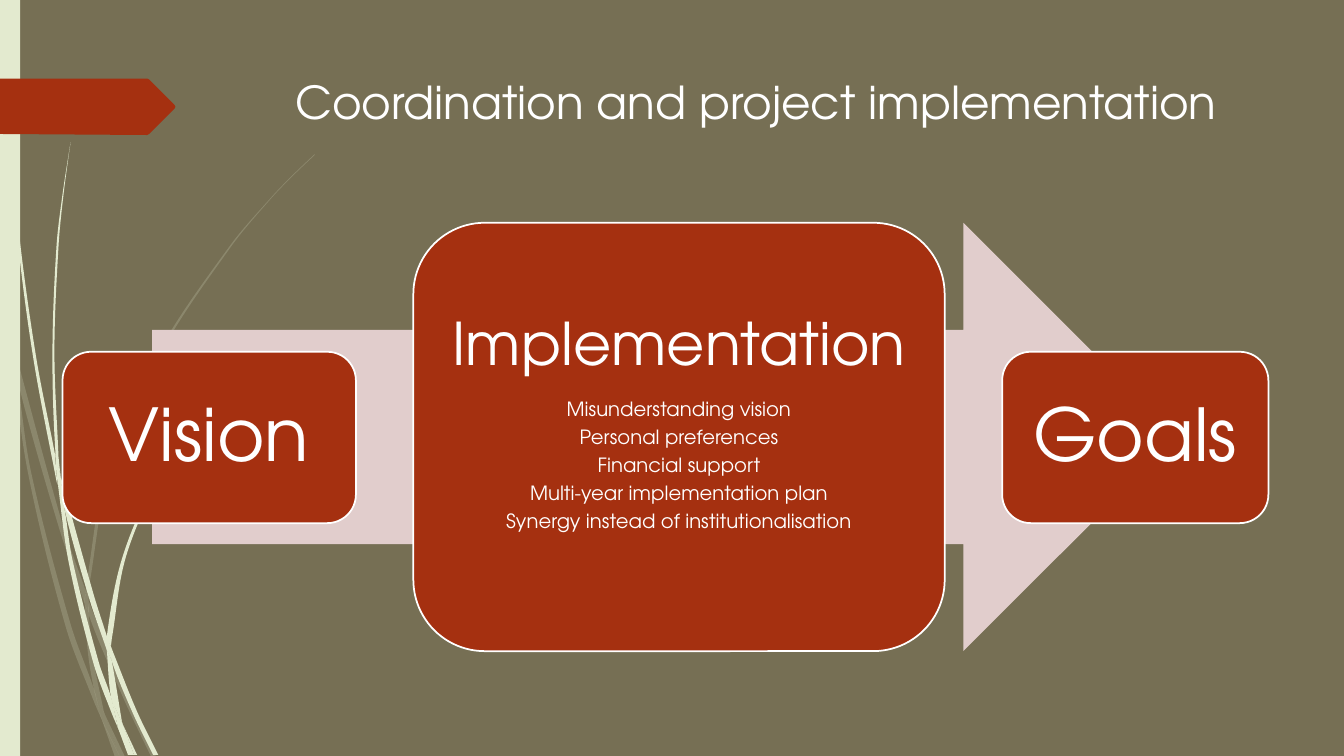
from math import dist
from lxml import etree
from pptx import Presentation
from pptx import util as u
from pptx.dml.color import RGBColor
from pptx.enum import shapes, text
from pptx.oxml import ns

THEME = dict(
    font="TeX Gyre Adventor",
    back="766F54", pale="E3EACF", rust="A53010", arrow="E1CDCC", white="FFFFFF",
    title=32.4, stage=52, head=42, item=14, border=1.25, haze=20,
)
TITLE = "Coordination and project implementation"
TAG = [(0, 0.78), (1.46, 0.78), (1.48, 0.79), (1.73, 1.04), (1.74, 1.06), (1.73, 1.08),
       (1.48, 1.33), (1.46, 1.34), (0, 1.33)]
SIDE_INSETS = (0.22, 0.22, 0.22, 0.22)
STAGES = [
    ((0.62, 3.49, 2.91, 1.7), SIDE_INSETS, [("Vision", "stage")]),
    ((4.1, 2.21, 5.27, 4.25), (0.17, 0.17, 0.17, 0.43), [
        ("Implementation", "head"),
        ("Misunderstanding vision", "item"),
        ("Personal preferences", "item"),
        ("Financial support", "item"),
        ("Multi-year implementation plan", "item"),
        ("Synergy instead of institutionalisation", "item"),
    ]),
    ((9.94, 3.49, 2.64, 1.7), SIDE_INSETS, [("Goals", "stage")]),
]
HAZY_LEAVES = [
    ([(0, 2.99), (0.1, 3.44), (0.11, 3.5)], [(0.09, 3.22), (0, 2.82)]),
    ([(0.14, 3.45), (0.17, 3.76), (0.58, 5.22), (0.84, 5.99)],
     [(0.85, 5.86), (0.62, 5.2), (0.14, 3.45)]),
    ([(0.88, 5.96), (0.88, 6.1), (1.23, 6.94), (1.5, 7.51)],
     [(1.55, 7.51), (1.27, 6.92), (0.92, 6.07), (0.88, 5.96)]),
    ([(1.05, 7.11), (1.19, 7.51)], [(1.24, 7.51), (1.05, 7.11)]),
    ([(0.11, 3.5), (0.28, 4.7), (0.65, 6.21), (0.92, 6.93), (1.01, 7.14)],
     [(0.99, 7.07), (0.93, 6.83), (0.7, 6.19), (0.31, 4.69), (0.17, 3.76), (0.11, 3.5)]),
    ([(0.84, 5.99), (0.87, 6.46), (0.93, 6.83), (0.96, 6.92), (1.05, 7.11)],
     [(1.03, 7.06), (0.91, 6.46), (0.88, 6.1), (0.84, 5.99)]),
    ([(3.12, 1.53), (2.89, 1.75), (2.68, 1.97), (2.28, 2.44), (1.58, 3.48), (1.07, 4.61),
      (0.85, 5.84), (0.85, 5.86), (0.88, 5.96)],
     [(0.88, 5.84), (1.1, 4.62), (1.6, 3.49), (2.29, 2.45), (2.68, 1.98), (2.9, 1.75),
      (3.12, 1.54)]),
    ([(1.01, 7.14), (1.14, 7.51)], [(1.19, 7.51), (1.01, 7.14)]),
    ([(0.85, 5.86), (0.84, 5.99), (0.88, 6.08), (0.88, 6.1)], [(0.88, 5.96), (0.85, 5.86)]),
    ([(0.93, 6.83), (0.99, 7.07), (1.01, 7.14), (1.19, 7.51)],
     [(1.05, 7.11), (0.96, 6.92), (0.93, 6.83)]),
]
BRIGHT_LEAVES = [
    ([(0.03, 0), (0.04, 0.48), (0.07, 1.1), (0.17, 2.33), (0.33, 3.55), (0.56, 4.77),
      (0.57, 4.81)],
     [(0.55, 4.57), (0.55, 4.53), (0.36, 3.55), (0.19, 2.32), (0.08, 1.09), (0.05, 0.48),
      (0.04, 0)]),
    ([(0.6, 4.72), (0.64, 5.05), (0.88, 5.92), (1.06, 6.45)],
     [(1.06, 6.31), (0.93, 5.9), (0.6, 4.72)]),
    ([(1.1, 6.41), (1.11, 6.56), (1.32, 7.08), (1.52, 7.49)],
     [(1.57, 7.49), (1.36, 7.06), (1.13, 6.49), (1.1, 6.41)]),
    ([(0.57, 4.77), (0.68, 5.57), (0.93, 6.59), (1.11, 7.08), (1.17, 7.22)],
     [(1.16, 7.17), (1.1, 6.91), (0.98, 6.57), (0.72, 5.56), (0.64, 5.05), (0.57, 4.77)]),
    ([(0.7, 1.41), (0.62, 1.93), (0.56, 2.45), (0.52, 3.49), (0.55, 4.49), (0.6, 4.72)],
     [(0.58, 4.53), (0.54, 3.49), (0.58, 2.45), (0.63, 1.93), (0.7, 1.41)]),
    ([(1.22, 7.19), (1.33, 7.49)], [(1.36, 7.49), (1.22, 7.19)]),
    ([(0.55, 4.49), (0.55, 4.53), (0.57, 4.77), (0.64, 5.05)], [(0.6, 4.72), (0.55, 4.49)]),
    ([(2.6, 3.44), (2.45, 3.58), (2.31, 3.73), (2.04, 4.05), (1.56, 4.74), (1.22, 5.51),
      (1.06, 6.31), (1.1, 6.41)],
     [(1.11, 6.33), (1.25, 5.52), (1.58, 4.76), (2.05, 4.06), (2.31, 3.74), (2.45, 3.59),
      (2.61, 3.44)]),
    ([(1.17, 7.22), (1.27, 7.49)], [(1.31, 7.49), (1.17, 7.22)]),
    ([(1.06, 6.45), (1.1, 6.91), (1.16, 7.06), (1.22, 7.19)],
     [(1.21, 7.16), (1.11, 6.56), (1.09, 6.51), (1.06, 6.45)]),
    ([(1.06, 6.31), (1.06, 6.45), (1.09, 6.51), (1.11, 6.56)], [(1.1, 6.41), (1.06, 6.31)]),
    ([(1.1, 6.91), (1.16, 7.17), (1.17, 7.22), (1.3, 7.49)],
     [(1.33, 7.49), (1.22, 7.19), (1.16, 7.06), (1.1, 6.91)]),
]


def rgb(name):
    return RGBColor.from_string(THEME[name])


def assign(obj, values):
    for key, value in values.items():
        setattr(obj, key, value)


def paint(sp, color, border=False, opacity=None):
    sp.shadow.inherit = False
    sp.fill.solid()
    sp.fill.fore_color.rgb = rgb(color)
    if opacity:
        clr = sp._element.spPr.find(".//" + ns.qn("a:srgbClr"))
        etree.SubElement(clr, ns.qn("a:alpha"), val=str(opacity * 1000))
    if border:
        sp.line.color.rgb = rgb("white")
        sp.line.width = u.Pt(THEME["border"])
    else:
        sp.line.fill.background()


def preset(parent, kind, box, color, border=False):
    sp = parent.shapes.add_shape(kind, *map(u.Inches, box))
    paint(sp, color, border)


def outline(parent, points):
    start, *rest = [tuple(map(u.Inches, point)) for point in points]
    builder = parent.shapes.build_freeform(*start)
    builder.add_line_segments(rest, close=True)
    return builder.convert_to_shape()


def curves(points):
    ends = [points[0], *points, points[-1]]
    slopes = [[(z - x) / (dist(a, b) + dist(b, c)) for x, z in zip(a, c)]
              for a, b, c in zip(ends, ends[1:], ends[2:])]
    segments = []
    for a, b, m, n in zip(points, points[1:], slopes, slopes[1:]):
        third = dist(a, b) / 3
        segments.append([tuple(x + third * k for x, k in zip(a, m)),
                         tuple(x - third * k for x, k in zip(b, n)), b])
    return segments


def leaf(group, down, up, opacity):
    segments = [*curves(down), [up[0]], *curves(up)]
    sp = outline(group, [down[0], *(point for seg in segments for point in seg)])
    lines = iter(sp._element.findall(".//" + ns.qn("a:lnTo")))
    for seg in segments:
        nodes = [next(lines) for _ in seg]
        if len(nodes) == 3:
            curve = etree.Element(ns.qn("a:cubicBezTo"))
            nodes[0].addprevious(curve)
            for node in nodes:
                curve.append(node[0])
                node.getparent().remove(node)
    paint(sp, "pale", opacity=opacity)


def textbox(parent, box, lines, **frame):
    tf = parent.shapes.add_textbox(*map(u.Inches, box)).text_frame
    assign(tf, dict(word_wrap=True, **frame))
    for i, (words, size, layout) in enumerate(lines):
        p = tf.add_paragraph() if i else tf.paragraphs[0]
        assign(p, layout)
        r = p.add_run()
        r.text = words
        assign(r.font, dict(name=THEME["font"], size=u.Pt(THEME[size])))
        r.font.color.rgb = rgb("white")


def stage(group, box, insets, lines):
    preset(group, shapes.MSO_SHAPE.ROUNDED_RECTANGLE, box, "rust", border=True)
    x, y, w, h = box
    pad = 0.0488 * min(w, h)
    sides = ("margin_left", "margin_top", "margin_right", "margin_bottom")
    styled = [(words, size, dict(alignment=text.PP_ALIGN.CENTER, line_spacing=0.9,
                                 space_after=u.Pt(0.35 * THEME[size])))
              for words, size in lines]
    textbox(group, (x + pad, y + pad, w - 2 * pad, h - 2 * pad), styled,
            vertical_anchor=text.MSO_ANCHOR.MIDDLE, **dict(zip(sides, map(u.Inches, insets))))


def main():
    prs = Presentation()
    assign(prs, dict(slide_width=u.Inches(13.33), slide_height=u.Inches(7.5)))
    s = prs.slides.add_slide(prs.slide_layouts[6])
    s.background.fill.solid()
    s.background.fill.fore_color.rgb = rgb("back")

    for leaves, opacity in ((HAZY_LEAVES, THEME["haze"]), (BRIGHT_LEAVES, None)):
        group = s.shapes.add_group_shape()
        for down, up in leaves:
            leaf(group, down, up, opacity)
    preset(s, shapes.MSO_SHAPE.RECTANGLE, (0, 0, 0.2, 7.5), "pale")
    paint(outline(s, TAG), "rust")
    textbox(s, (2.83, 0.69, 9.75, 1.4), [(TITLE, "title", {})])

    diagram = s.shapes.add_group_shape()
    preset(diagram, shapes.MSO_SHAPE.RIGHT_ARROW, (1.51, 2.21, 10.17, 4.25), "arrow")
    for box, insets, lines in STAGES:
        stage(diagram, box, insets, lines)
    prs.save("out.pptx")


if __name__ == "__main__":
    main()
